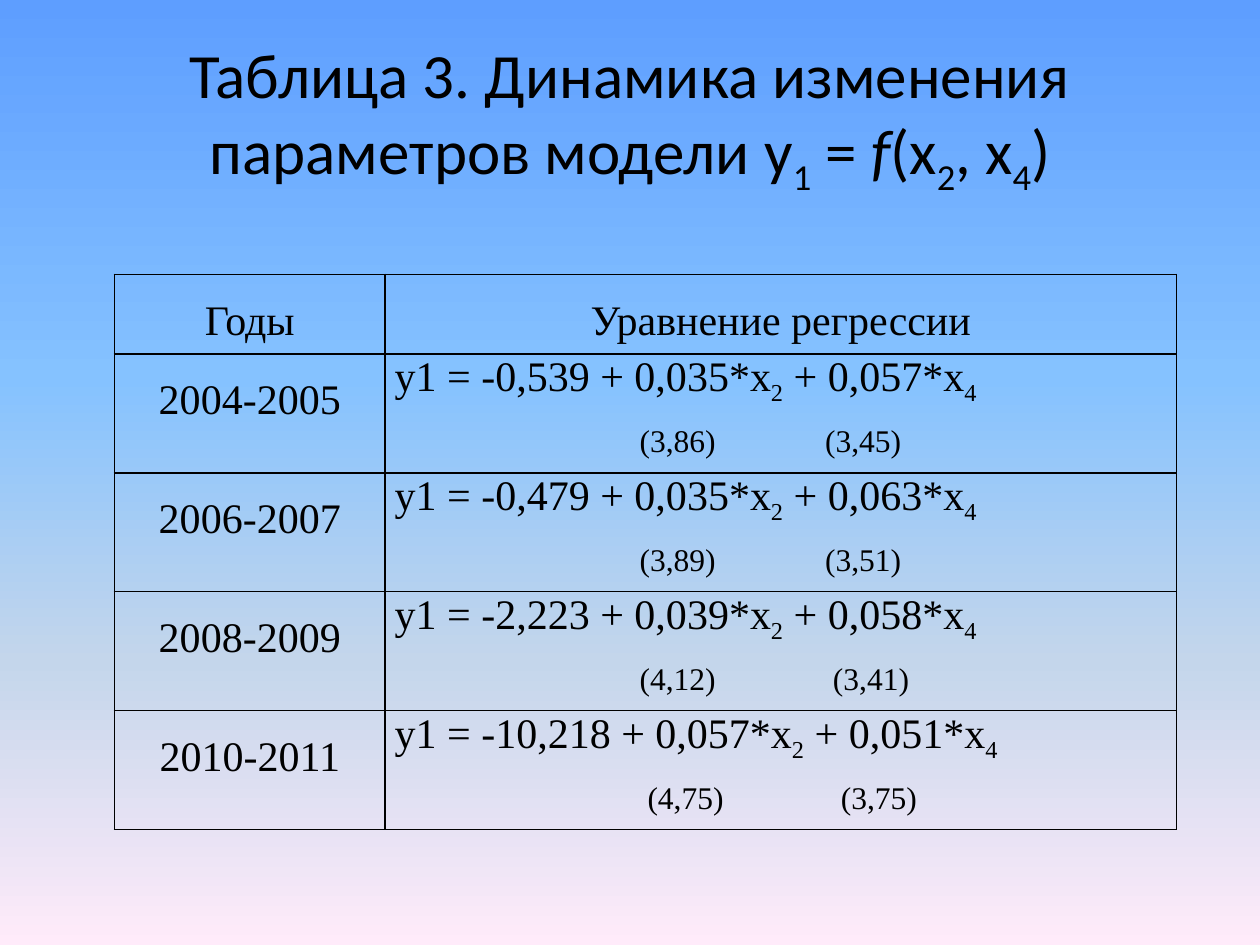
"""Build a slide with a table of regression equations by period."""
from lxml import etree
from pptx import Presentation
from pptx.dml.color import RGBColor
from pptx.enum.text import MSO_ANCHOR, PP_ALIGN
from pptx.oxml.ns import qn
from pptx.util import Pt

CENTER, LEFT, JUSTIFY = PP_ALIGN.CENTER, PP_ALIGN.LEFT, PP_ALIGN.JUSTIFY
MIDDLE = MSO_ANCHOR.MIDDLE
SUB, ITALIC = "sub", "italic"
BLACK = "000000"

TITLE = [
    ("Таблица 3. Динамика изменения параметров модели у", None), ("1", SUB),
    (" = ", None), ("f", ITALIC), ("(x", None), ("2", SUB),
    (", x", None), ("4", SUB), (")", None),
]
HEADERS = ["Годы", "Уравнение регрессии"]
MODELS = [
    ("2004-2005", ("-0,539", "0,035", "0,057"), ("(3,86)", "(3,45)"), (140, 246)),
    ("2006-2007", ("-0,479", "0,035", "0,063"), ("(3,89)", "(3,51)"), (140, 246)),
    ("2008-2009", ("-2,223", "0,039", "0,058"), ("(4,12)", "(3,41)"), (140, 250.5)),
    ("2010-2011", ("-10,218", "0,057", "0,051"), ("(4,75)", "(3,75)"), (144.5, 255)),
]
BACKGROUND = [(0, "5E9EFF"), (40, "85C2FF"), (70, "C4D6EB"), (100, "FFEBFA")]
COL_WIDTHS = [154.8, 452.2]
HEADER_HEIGHT, ROW_HEIGHT = 45.4, 68


def rgb(value):
    return RGBColor.from_string(value)


def write(p, runs, size, font, align, spacing=None):
    p.alignment = align
    p.font.size, p.font.name = Pt(size), font
    p.font.color.rgb = rgb(BLACK)
    if spacing:
        p.line_spacing = spacing
    for text, style in runs:
        r = p.add_run()
        r.text = text
        if style == ITALIC:
            r.font.italic = True
        elif style == SUB:
            r._r.get_or_add_rPr().set("baseline", "-25000")


def add_tabs(p, stops):
    pPr = p._p.get_or_add_pPr()
    tabs = etree.Element(qn("a:tabLst"))
    for stop in stops:
        etree.SubElement(tabs, qn("a:tab"), pos=str(int(Pt(stop))), algn="l")
    pPr.find(qn("a:defRPr")).addprevious(tabs)


def style_cell(cell):
    cell.margin_left = cell.margin_right = Pt(5.4)
    cell.margin_top = cell.margin_bottom = Pt(0)
    tcPr = cell._tc.get_or_add_tcPr()
    for side in ("lnL", "lnR", "lnT", "lnB"):
        ln = etree.SubElement(tcPr, qn(f"a:{side}"), w=str(int(Pt(1))))
        fill = etree.SubElement(ln, qn("a:solidFill"))
        etree.SubElement(fill, qn("a:srgbClr"), val=BLACK)
    cell.fill.background()


def paint_background(s):
    fill = s.background.fill
    fill.gradient()
    fill.gradient_angle = 270
    stops = s.element.find(".//" + qn("a:gsLst"))
    for old in list(stops):
        stops.remove(old)
    for pos, color in BACKGROUND:
        gs = etree.SubElement(stops, qn("a:gs"), pos=str(pos * 1000))
        etree.SubElement(gs, qn("a:srgbClr"), val=color)


def add_title(s):
    tf = s.shapes.add_textbox(Pt(36), Pt(21.6), Pt(648), Pt(90)).text_frame
    tf.word_wrap = True
    tf.vertical_anchor = MIDDLE
    write(tf.paragraphs[0], TITLE, 36, "Calibri", CENTER)


def add_models(s):
    height = HEADER_HEIGHT + ROW_HEIGHT * len(MODELS)
    table = s.shapes.add_table(len(MODELS) + 1, len(COL_WIDTHS), Pt(65.3), Pt(156.8),
                               Pt(sum(COL_WIDTHS)), Pt(height)).table
    table.first_row = table.horz_banding = False
    for col, width in zip(table.columns, COL_WIDTHS):
        col.width = Pt(width)
    for i, row in enumerate(table.rows):
        row.height = Pt(ROW_HEIGHT if i else HEADER_HEIGHT)
    for cell in table.iter_cells():
        style_cell(cell)

    font = "Times New Roman"
    for j, header in enumerate(HEADERS):
        p = table.cell(0, j).text_frame.paragraphs[0]
        write(p, [(header, None)], 24, font, CENTER, 1.5)
    for i, (years, (a, b, c), stats, stops) in enumerate(MODELS, 1):
        p = table.cell(i, 0).text_frame.paragraphs[0]
        write(p, [(years, None)], 24, font, CENTER, 1.5)
        tf = table.cell(i, 1).text_frame
        equation = [(f"y1 = {a} + {b}*x", None), ("2", SUB),
                    (f" + {c}*x", None), ("4", SUB)]
        write(tf.paragraphs[0], equation, 24, font, JUSTIFY)
        p = tf.add_paragraph()
        write(p, [("\t" + "\t".join(stats), None)], 18, font, LEFT, 1.5)
        add_tabs(p, stops)


def main():
    prs = Presentation()
    prs.slide_width, prs.slide_height = Pt(720), Pt(540)
    s = prs.slides.add_slide(prs.slide_layouts[6])
    paint_background(s)
    add_title(s)
    add_models(s)
    prs.save("out.pptx")


if __name__ == "__main__":
    main()
